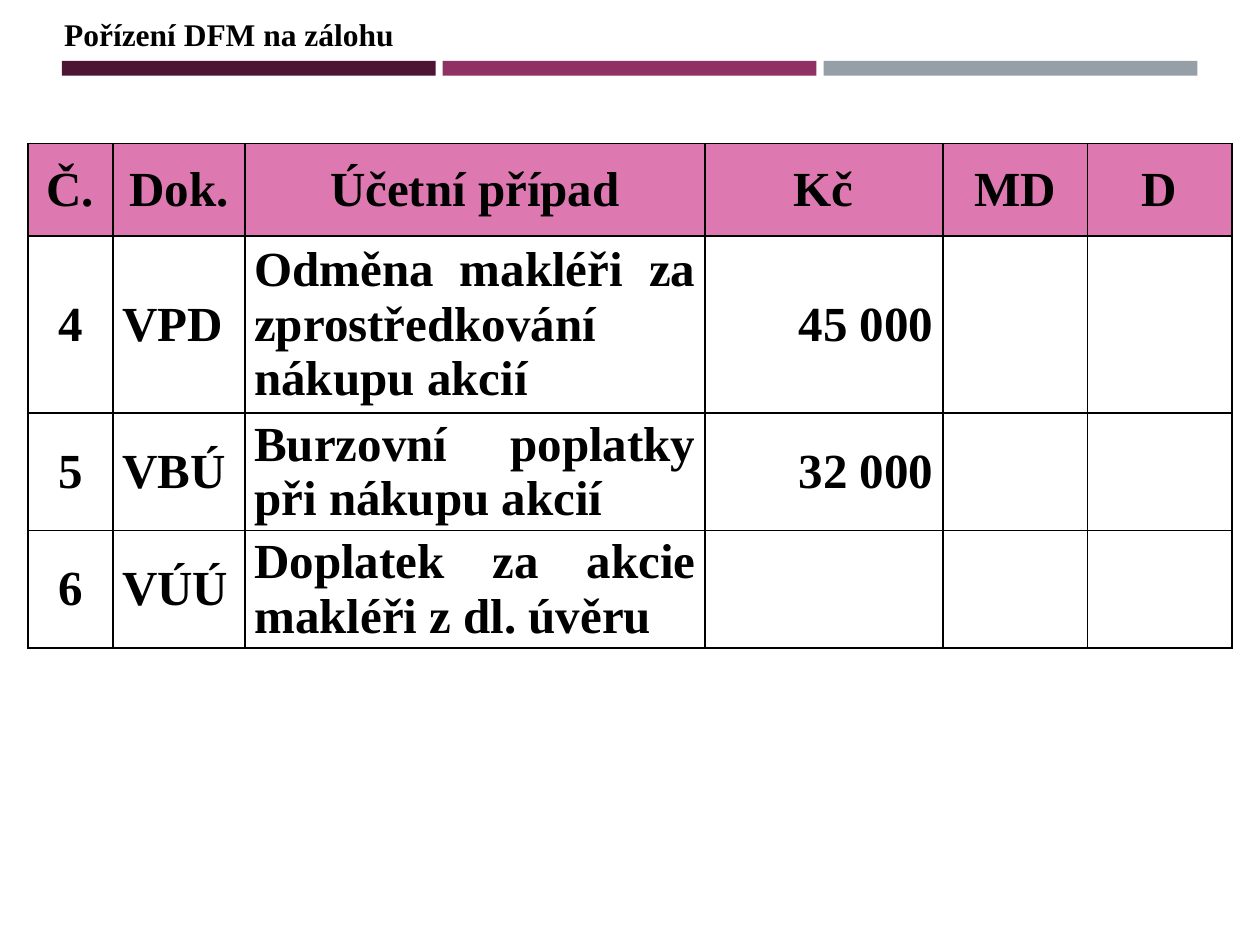
from dataclasses import dataclass

from lxml import etree
from pptx import Presentation
from pptx.dml.color import RGBColor
from pptx.enum.shapes import MSO_SHAPE
from pptx.enum.text import MSO_ANCHOR, MSO_AUTO_SIZE, PP_ALIGN
from pptx.oxml.ns import qn
from pptx.util import Pt

RECTANGLE = MSO_SHAPE.RECTANGLE
MIDDLE = MSO_ANCHOR.MIDDLE
FIT_SHAPE = MSO_AUTO_SIZE.SHAPE_TO_FIT_TEXT
LEFT, CENTER, RIGHT, JUSTIFY = PP_ALIGN.LEFT, PP_ALIGN.CENTER, PP_ALIGN.RIGHT, PP_ALIGN.JUSTIFY

COLORS = {
    "plum": "4D1434",
    "berry": "903163",
    "gray": "969FA7",
    "header": "DD79B0",
    "ink": "000000",
}
BAR_LEFT, BAR_STEP, BAR_WIDTH = 35.4, 217.6, 213.6
COLUMN_WIDTHS = [48.5, 75.5, 262.8, 136, 82.6, 82.6]
ROW_HEIGHTS = [53, 100.6, 67.2, 67.2]
BODY_ALIGNMENTS = [CENTER, LEFT, JUSTIFY, RIGHT, CENTER, CENTER]
ENTRIES = [
    ["Č.", "Dok.", "Účetní případ", "Kč", "MD", "D"],
    ["4", "VPD", "Odměna makléři za zprostředkování nákupu akcií", "45 000", "", ""],
    ["5", "VBÚ", "Burzovní poplatky při nákupu akcií", "32 000", "", ""],
    ["6", "VÚÚ", "Doplatek za akcie makléři z dl. úvěru", "", "", ""],
]


def set_values(target, values):
    for name, value in values.items():
        setattr(target, name, value)


@dataclass
class PageBuilder:
    """Draws styled elements on the current slide."""

    page: object
    font: str = "Times New Roman"

    def text(self, para, text, size, alignment=LEFT):
        para.alignment = alignment
        span = para.add_run()
        span.text = text
        set_values(span.font, {"name": self.font, "size": Pt(size), "bold": True})
        span.font.color.rgb = RGBColor.from_string(COLORS["ink"])

    def bar(self, left, top, width, height, color):
        bar = self.page.shapes.add_shape(RECTANGLE, Pt(left), Pt(top), Pt(width), Pt(height))
        bar.shadow.inherit = False
        bar.fill.solid()
        bar.fill.fore_color.rgb = RGBColor.from_string(COLORS[color])
        bar.line.fill.background()

    def title(self, left, top, width, height, text):
        box = self.page.shapes.add_textbox(Pt(left), Pt(top), Pt(width), Pt(height))
        set_values(box.text_frame, {"word_wrap": False, "auto_size": FIT_SHAPE})
        self.text(box.text_frame.paragraphs[0], text, 18)

    def border(self, cell):
        properties = cell._tc.get_or_add_tcPr()
        for position, side in enumerate(("lnL", "lnR", "lnT", "lnB")):
            line = etree.Element(qn(f"a:{side}"), w=str(Pt(1)))
            fill = etree.SubElement(line, qn("a:solidFill"))
            etree.SubElement(fill, qn("a:srgbClr"), val=COLORS["ink"])
            properties.insert(position, line)

    def cell(self, cell, text, alignment, is_header):
        set_values(cell, {
            "vertical_anchor": MIDDLE,
            "margin_left": Pt(5.4),
            "margin_right": Pt(5.4),
            "margin_top": 0,
            "margin_bottom": 0,
        })
        if is_header:
            cell.fill.solid()
            cell.fill.fore_color.rgb = RGBColor.from_string(COLORS["header"])
        else:
            cell.fill.background()
        self.border(cell)
        if text:
            self.text(cell.text_frame.paragraphs[0], text, 28, alignment)

    def table(self, left, top, entries):
        frame = self.page.shapes.add_table(
            len(ROW_HEIGHTS), len(COLUMN_WIDTHS), Pt(left), Pt(top),
            Pt(sum(COLUMN_WIDTHS)), Pt(sum(ROW_HEIGHTS)))
        table = frame.table
        set_values(table, {"horz_banding": False, "first_row": False})
        for column, width in zip(table.columns, COLUMN_WIDTHS):
            column.width = Pt(width)
        for row_index, (row, height) in enumerate(zip(table.rows, ROW_HEIGHTS)):
            row.height = Pt(height)
            is_header = row_index == 0
            for cell, text, alignment in zip(row.cells, entries[row_index], BODY_ALIGNMENTS):
                self.cell(cell, text, CENTER if is_header else alignment, is_header)


def main():
    deck = Presentation()
    set_values(deck, {"slide_width": Pt(720), "slide_height": Pt(540)})
    builder = PageBuilder(deck.slides.add_slide(deck.slide_layouts[6]))
    for index, color in enumerate(("plum", "berry", "gray")):
        builder.bar(BAR_LEFT + index * BAR_STEP, 34.8, BAR_WIDTH, 8.4, color)
    builder.title(29.6, 5.2, 205, 29, "Pořízení DFM na zálohu")
    builder.table(16, 82, ENTRIES)
    deck.save("out.pptx")


if __name__ == "__main__":
    main()
